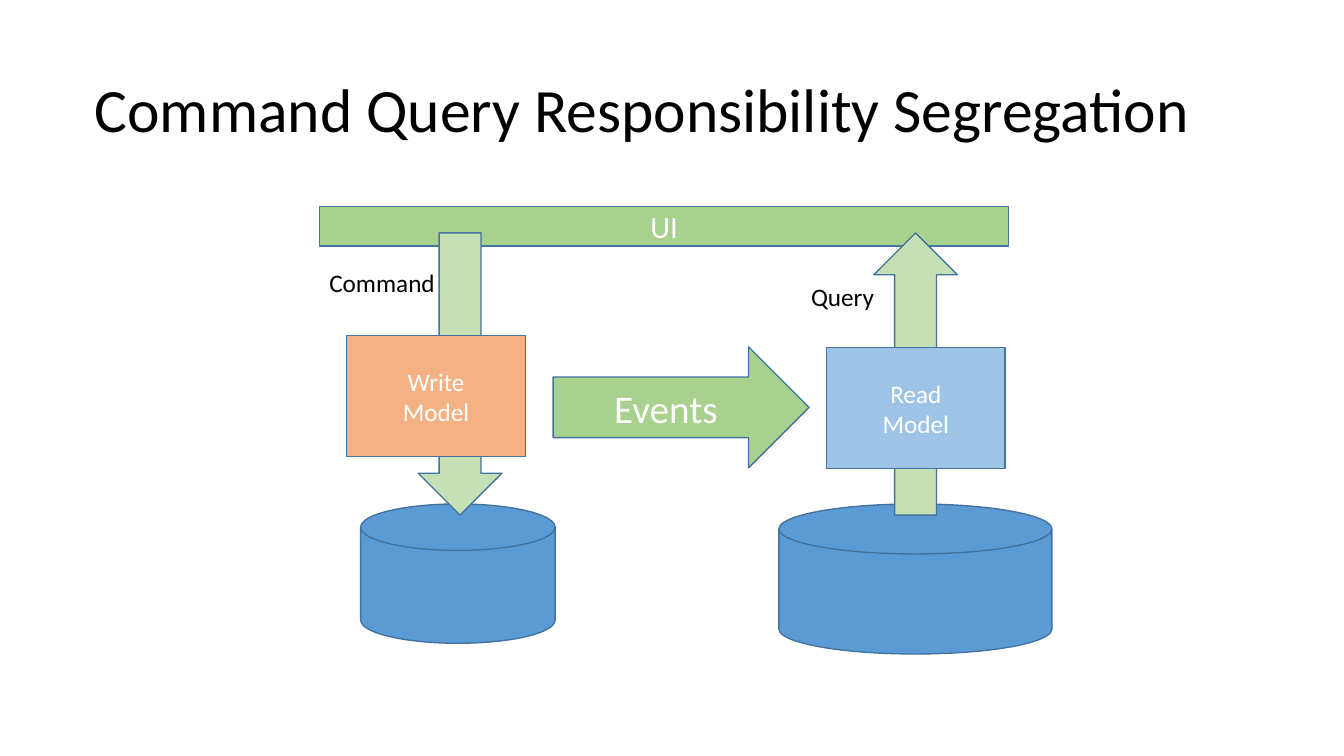
import pptx
import pptx.dml.color
import pptx.enum.shapes
import pptx.enum.text
import pptx.util

Cm = pptx.util.Cm
Pt = pptx.util.Pt
RGBColor = pptx.dml.color.RGBColor
Shape = pptx.enum.shapes.MSO_SHAPE
Align = pptx.enum.text.PP_ALIGN
Anchor = pptx.enum.text.MSO_ANCHOR

BLACK = RGBColor(0x00, 0x00, 0x00)
WHITE = RGBColor(0xFF, 0xFF, 0xFF)
OUTLINE = RGBColor(0x43, 0x73, 0x9E)
BLUE = RGBColor(0x5B, 0x9B, 0xD5)
LIGHT_BLUE = RGBColor(0x9D, 0xC3, 0xE6)
GREEN = RGBColor(0xA9, 0xD1, 0x8E)
LIGHT_GREEN = RGBColor(0xC5, 0xE0, 0xB4)
ORANGE = RGBColor(0xF4, 0xB1, 0x83)
FONT = "Calibri"

TITLE = "Command Query Responsibility Segregation"
TITLE_BOX = (2.13, 0.99, 29.21, 3.68)

# Sizes and positions in centimetres
STORE_TOP = 12.7
FLOW_TOP, FLOW_SIZE = 5.87, (2.11, 7.11)
MODEL_SIZE = (4.5, 3.05)

# Shape, (left, top), (width, height), fill, text, text size; back to front
PARTS = [
    (Shape.FLOWCHART_MAGNETIC_DISK, (19.63, STORE_TOP), (6.88, 3.78), BLUE, "", 18),
    (Shape.FLOWCHART_MAGNETIC_DISK, (9.09, STORE_TOP), (4.9, 3.51), BLUE, "", 18),
    (Shape.RECTANGLE, (8.05, 5.21), (17.37, 0.99), GREEN, "UI", 22),
    (Shape.DOWN_ARROW, (10.54, FLOW_TOP), FLOW_SIZE, LIGHT_GREEN, "", 18),
    (Shape.RECTANGLE, (8.74, 8.46), MODEL_SIZE, ORANGE, "Write\vModel", 18),
    (Shape.UP_ARROW, (22.02, FLOW_TOP), FLOW_SIZE, LIGHT_GREEN, "", 18),
    (Shape.RECTANGLE, (20.83, 8.76), MODEL_SIZE, LIGHT_BLUE, "Read\vModel", 18),
    (Shape.RIGHT_ARROW, (13.94, 8.74), (6.45, 3.05), GREEN, "Events", 28),
]

# Text, (left, top, width, height)
LABELS = [
    ("Command", (8.05, 6.6, 4.22, 1.02)),
    ("Query", (20.19, 6.96, 2.51, 1.02)),
]


def write(shape, text, size, color, alignment, anchor):
    frame = shape.text_frame
    frame.word_wrap = True
    frame.vertical_anchor = anchor
    frame.text = text
    paragraph = frame.paragraphs[0]
    paragraph.alignment = alignment
    for run in paragraph.runs:
        run.font.name = FONT
        run.font.size = Pt(size)
        run.font.color.rgb = color


def add_title(slide):
    title = slide.shapes.title
    title.left, title.top, title.width, title.height = map(Cm, TITLE_BOX)
    write(title, TITLE, 44, BLACK, Align.LEFT, Anchor.MIDDLE)
    title.text_frame.paragraphs[0].line_spacing = 0.9


def add_part(slide, kind, position, size, fill, text, text_size):
    shape = slide.shapes.add_shape(kind, *map(Cm, position + size))
    shape.shadow.inherit = False
    shape.fill.solid()
    shape.fill.fore_color.rgb = fill
    shape.line.color.rgb = OUTLINE
    shape.line.width = Pt(1)
    if text:
        write(shape, text, text_size, WHITE, Align.CENTER, Anchor.MIDDLE)
        # The thin bar needs its full height for its text
        shape.text_frame.margin_top = shape.text_frame.margin_bottom = Cm(0)


def add_label(slide, text, box):
    label = slide.shapes.add_textbox(*map(Cm, box))
    write(label, text, 18, BLACK, Align.LEFT, Anchor.TOP)
    label.text_frame.auto_size = pptx.enum.text.MSO_AUTO_SIZE.SHAPE_TO_FIT_TEXT


def main():
    presentation = pptx.Presentation()
    presentation.slide_width = Cm(33.87)
    presentation.slide_height = Cm(19.05)
    title_only = presentation.slide_layouts[5]
    slide = presentation.slides.add_slide(title_only)

    add_title(slide)
    for part in PARTS:
        add_part(slide, *part)
    for text, box in LABELS:
        add_label(slide, text, box)

    presentation.save("out.pptx")


if __name__ == "__main__":
    main()
